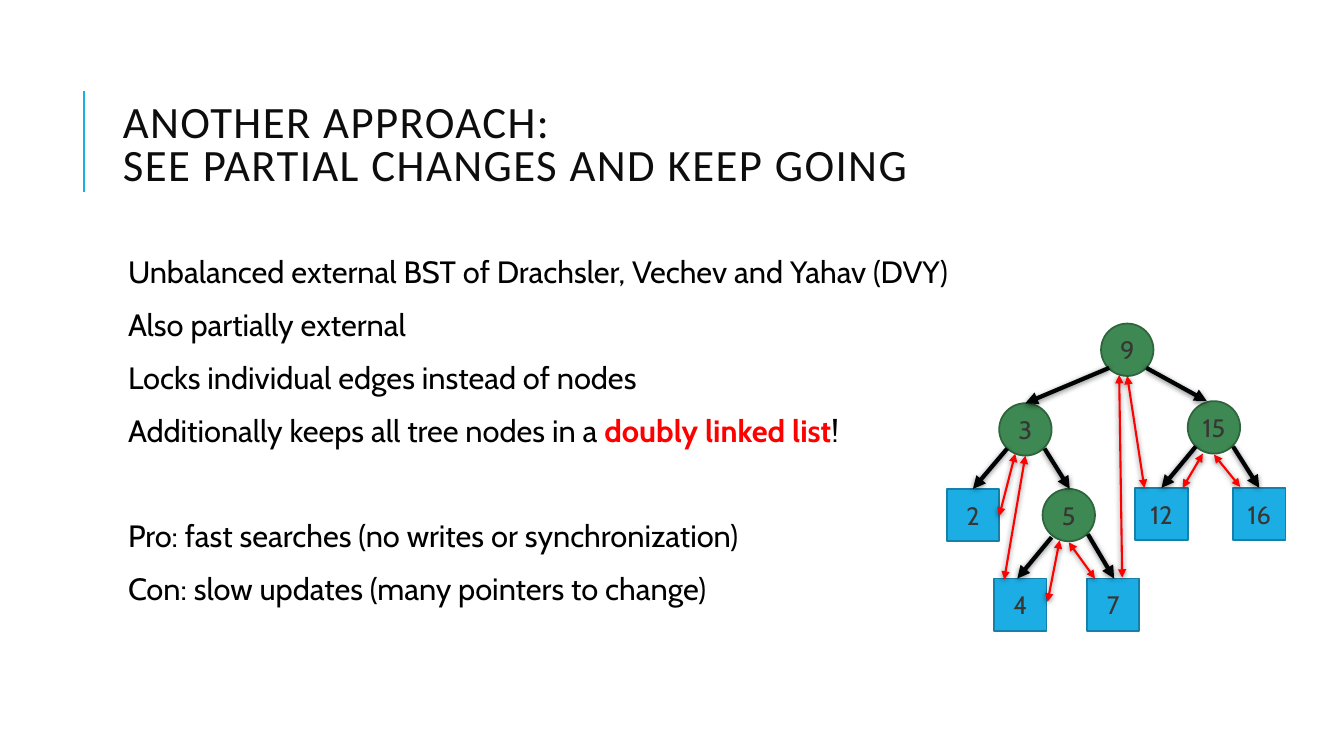
from dataclasses import dataclass

from lxml.etree import SubElement as Sub
from pptx import Presentation
from pptx.dml.color import RGBColor as RGB
from pptx.enum.shapes import MSO_CONNECTOR as CONN, MSO_SHAPE as SHAPE
from pptx.enum.text import MSO_ANCHOR as ANCHOR, PP_ALIGN as ALIGN
from pptx.oxml.ns import qn
from pptx.slide import Slide
from pptx.text.text import TextFrame, _Paragraph as Para
from pptx.util import Inches, Pt

COLORS = {
    "background": "FFFFFF", "title": "0D0D0D", "body": "000000",
    "emphasis": "FF0000", "accent": "1CADE4", "label": "383635",
    "inner": "3E8853", "inner_line": "2E653D",
    "leaf": "1CADE4", "leaf_line": "1580A9",
    "edge": "000304", "link": "FF0000", "shadow": "000000",
}
NODE_SIZE = 0.52
TITLE_LINES = ["ANOTHER APPROACH:", "SEE PARTIAL CHANGES AND KEEP GOING"]


@dataclass
class Line:
    texts: list[str]
    space_before: float = 12
    emphasized: int = -1


@dataclass
class Node:
    key: str
    x: float
    y: float
    leaf: bool = False


@dataclass
class Arrow:
    x1: float
    y1: float
    x2: float
    y2: float


BODY = [
    Line(["Unbalanced external BST of Drachsler, Vechev and Yahav (DVY)"]),
    Line(["Also partially external"]),
    Line(["Locks individual edges instead of nodes"]),
    Line(["Additionally keeps all tree nodes in a ", "doubly linked list", "!"],
         emphasized=1),
    Line(["Pro: fast searches (no writes or synchronization)"], space_before=49.5),
    Line(["Con: slow updates (many pointers to change)"]),
]
NODES = [
    Node("9", 10.92, 3.21), Node("3", 9.91, 4), Node("15", 11.78, 3.98),
    Node("5", 10.34, 4.85), Node("2", 9.39, 4.85, True),
    Node("12", 11.26, 4.84, True), Node("16", 12.23, 4.84, True),
    Node("4", 9.86, 5.74, True), Node("7", 10.78, 5.74, True),
]
EDGES = [
    Arrow(11, 3.65, 10.17, 4), Arrow(11.37, 3.65, 11.97, 3.98),
    Arrow(9.99, 4.45, 9.65, 4.85), Arrow(10.36, 4.45, 10.61, 4.85),
    Arrow(10.43, 5.33, 10.09, 5.74), Arrow(10.79, 5.3, 11.05, 5.74),
    Arrow(11.86, 4.43, 11.52, 4.84), Arrow(12.23, 4.43, 12.49, 4.84),
]
LINKS = [
    Arrow(9.91, 5.12, 10.07, 4.5), Arrow(9.96, 5.75, 10.17, 4.52),
    Arrow(10.39, 5.97, 10.51, 5.36), Arrow(10.86, 5.74, 10.6, 5.38),
    Arrow(11.13, 5.73, 11.1, 3.72), Arrow(11.35, 4.84, 11.18, 3.73),
    Arrow(11.73, 4.84, 11.93, 4.5), Arrow(12.3, 4.83, 12.04, 4.51),
]


def rgb(name: str) -> RGB:
    return RGB.from_string(COLORS[name])


def add_run(p: Para, text: str, size: float, color: str, font: str = "Cabin",
            bold: bool = False, spacing: int = 0) -> None:
    r = p.add_run()
    r.text = text
    r.font.size, r.font.name, r.font.bold = Pt(size), font, bold
    r.font.color.rgb = rgb(color)
    if spacing:
        r._r.get_or_add_rPr().set("spc", str(spacing))


def add_text_box(s: Slide, y: float, height: float) -> TextFrame:
    box = s.shapes.add_textbox(Inches(1.12), Inches(y), Inches(10.63), Inches(height))
    tf = box.text_frame
    tf.word_wrap = True
    return tf


def add_title(s: Slide) -> None:
    tf = add_text_box(s, 0.64, 1.64)
    tf.vertical_anchor = ANCHOR.MIDDLE
    p = tf.paragraphs[0]
    p.line_spacing = 0.8
    for i, text in enumerate(TITLE_LINES):
        if i:
            p.add_line_break()
        add_run(p, text, 32, "title", "Calibri", spacing=100)


def add_body(s: Slide) -> None:
    tf = add_text_box(s, 2.5, 4.4)
    tf.margin_left = Inches(0.15)
    tf.margin_right = tf.margin_top = tf.margin_bottom = Inches(0.05)
    for i, line in enumerate(BODY):
        p = tf.add_paragraph() if i else tf.paragraphs[0]
        p.line_spacing = 0.9
        p.space_before, p.space_after = Pt(line.space_before), Pt(2)
        for j, text in enumerate(line.texts):
            strong = j == line.emphasized
            add_run(p, text, 22, "emphasis" if strong else "body", bold=strong)


def add_node(s: Slide, node: Node) -> None:
    kind = "leaf" if node.leaf else "inner"
    sp = s.shapes.add_shape(SHAPE.RECTANGLE if node.leaf else SHAPE.OVAL,
                            Inches(node.x), Inches(node.y),
                            Inches(NODE_SIZE), Inches(NODE_SIZE))
    sp.shadow.inherit = False
    sp.fill.solid()
    sp.fill.fore_color.rgb = rgb(kind)
    sp.line.color.rgb = rgb(f"{kind}_line")
    sp.line.width = Pt(1.25)
    tf = sp.text_frame
    tf.word_wrap = False
    tf.vertical_anchor = ANCHOR.MIDDLE
    p = tf.paragraphs[0]
    p.alignment = ALIGN.CENTER
    add_run(p, node.key, 18, "label")


def add_line(s: Slide, a: Arrow, color: str, width: float,
             ends: tuple[str, ...] = ()) -> None:
    cx = s.shapes.add_connector(CONN.STRAIGHT, Inches(a.x1), Inches(a.y1),
                                Inches(a.x2), Inches(a.y2))
    cx.line.color.rgb = rgb(color)
    cx.line.width = Pt(width)
    sp_pr = cx.element.spPr
    for end in ends:
        Sub(sp_pr.find(qn("a:ln")), qn(f"a:{end}"), type="triangle")
    effects = Sub(sp_pr, qn("a:effectLst"))
    if ends:
        shadow = Sub(effects, qn("a:outerShdw"), blurRad=str(Pt(4)),
                     dist=str(Pt(1)), dir="5400000", rotWithShape="0")
        tint = Sub(shadow, qn("a:srgbClr"), val=COLORS["shadow"])
        Sub(tint, qn("a:alpha"), val="50000")


def main() -> None:
    prs = Presentation()
    prs.slide_width, prs.slide_height = Inches(13.33), Inches(7.5)
    s = prs.slides.add_slide(prs.slide_layouts[6])
    s.background.fill.solid()
    s.background.fill.fore_color.rgb = rgb("background")
    add_line(s, Arrow(0.83, 1.9, 0.83, 0.9), "accent", 1.5)
    add_title(s)
    add_body(s)
    for node in NODES:
        add_node(s, node)
    for edge in EDGES:
        add_line(s, edge, "edge", 3, ("tailEnd",))
    for link in LINKS:
        add_line(s, link, "link", 1.5, ("headEnd", "tailEnd"))
    prs.save("out.pptx")


if __name__ == "__main__":
    main()
